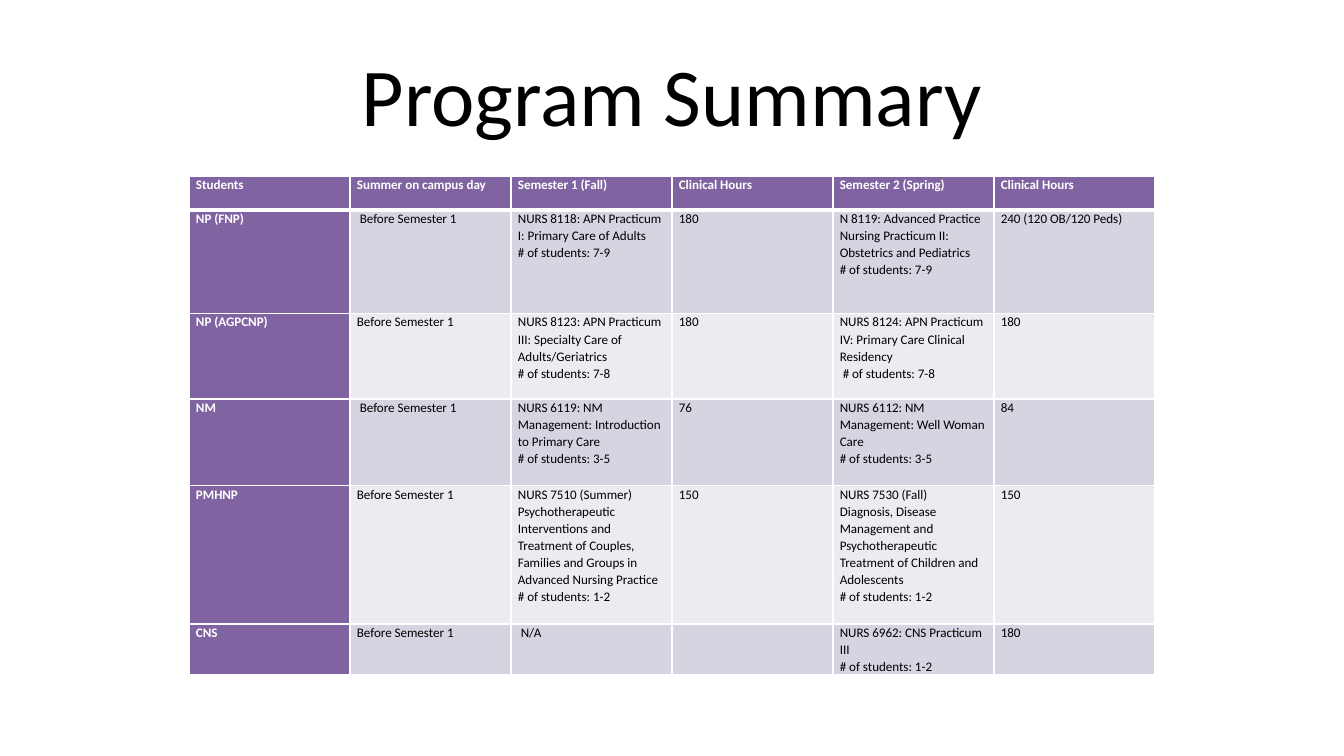
from dataclasses import dataclass

from lxml.etree import SubElement as Sub
from pptx import Presentation as Deck
from pptx.dml.color import RGBColor as Color
from pptx.enum.text import MSO_ANCHOR as Anchor, PP_ALIGN as Align
from pptx.oxml.ns import qn
from pptx.util import Emu, Pt

SCALE = 9525


@dataclass(frozen=True)
class Theme:
    face: str = "Calibri"
    title: int = 44
    body: int = 7
    ink: str = "000000"
    white: str = "FFFFFF"
    head: str = "8064A2"
    odd: str = "D8D3E0"
    even: str = "EDEAF0"
    thin: int = 1
    thick: int = 3


@dataclass(frozen=True)
class Row:
    high: int
    cells: tuple[str, ...]


THEME = Theme()
LEFT, TOP, WIDE = 135, 126, 115
ROWS = (
    Row(24, ("Students", "Summer on campus day", "Semester 1 (Fall)",
             "Clinical Hours", "Semester 2 (Spring)", "Clinical Hours")),
    Row(74, ("NP (FNP)", " Before Semester 1",
             "NURS 8118: APN Practicum I: Primary Care of Adults\n# of students: 7-9",
             "180",
             "N 8119: Advanced Practice Nursing Practicum II: "
             "Obstetrics and Pediatrics\n# of students: 7-9",
             "240 (120 OB/120 Peds)")),
    Row(61, ("NP (AGPCNP)", "Before Semester 1",
             "NURS 8123: APN Practicum III: Specialty Care of "
             "Adults/Geriatrics\n# of students: 7-8",
             "180",
             "NURS 8124: APN Practicum IV: Primary Care Clinical "
             "Residency\n # of students: 7-8",
             "180")),
    Row(62, ("NM", " Before Semester 1",
             "NURS 6119: NM Management: Introduction to Primary Care\n# of students: 3-5",
             "76",
             "NURS 6112: NM Management: Well Woman Care\n# of students: 3-5",
             "84")),
    Row(99, ("PMHNP", "Before Semester 1",
             "NURS 7510 (Summer)\nPsychotherapeutic Interventions and Treatment of "
             "Couples, Families and Groups in Advanced Nursing Practice\n"
             "# of students: 1-2",
             "150",
             "NURS 7530 (Fall)\nDiagnosis, Disease Management and Psychotherapeutic "
             "Treatment of Children and Adolescents\n# of students: 1-2",
             "150")),
    Row(36, ("CNS", "Before Semester 1", " N/A", "",
             "NURS 6962: CNS Practicum III\n# of students: 1-2", "180")),
)


def px(size: int) -> Emu:
    return Emu(size * SCALE)


def style(font, size: int, tint: str, bold: bool = False) -> None:
    font.name = THEME.face
    font.size = Pt(size)
    font.bold = bold
    font.color.rgb = Color.from_string(tint)


def edge(cell, row: int) -> None:
    props = cell._tc.get_or_add_tcPr()
    top = THEME.thick if row == 1 else THEME.thin
    base = THEME.thick if row == 0 else THEME.thin
    sides = {"lnL": THEME.thin, "lnR": THEME.thin, "lnT": top, "lnB": base}
    for side, width in sides.items():
        line = Sub(props, qn(f"a:{side}"), w=str(Pt(width)))
        Sub(Sub(line, qn("a:solidFill")), qn("a:srgbClr"), val=THEME.white)


def draw_cell(cell, text: str, row: int, col: int) -> None:
    label = row == 0 or col == 0
    cell.margin_left = cell.margin_right = px(5)
    cell.margin_top = cell.margin_bottom = 0
    cell.vertical_anchor = Anchor.TOP
    edge(cell, row)
    fill = THEME.head if label else THEME.odd if row % 2 else THEME.even
    cell.fill.solid()
    cell.fill.fore_color.rgb = Color.from_string(fill)
    cell.text_frame.text = text
    for para in cell.text_frame.paragraphs:
        para.line_spacing = 1.07
        para.space_after = Pt(0 if row else 8)
        style(para.font, THEME.body, THEME.white if label else THEME.ink, label)


def draw_title(slide, text: str) -> None:
    frame = slide.shapes.add_textbox(px(48), px(22), px(864), px(90)).text_frame
    frame.word_wrap = True
    frame.vertical_anchor = Anchor.MIDDLE
    para = frame.paragraphs[0]
    para.text = text
    para.alignment = Align.CENTER
    style(para.font, THEME.title, THEME.ink)


def draw_table(slide, rows: tuple[Row, ...]) -> None:
    count = len(rows[0].cells)
    high = sum(row.high for row in rows)
    table = slide.shapes.add_table(
        len(rows), count, px(LEFT), px(TOP), px(WIDE * count), px(high)
    ).table
    table.first_row = table.horz_banding = False
    for col in table.columns:
        col.width = px(WIDE)
    for i, row in enumerate(rows):
        table.rows[i].height = px(row.high)
        for j, text in enumerate(row.cells):
            draw_cell(table.cell(i, j), text, i, j)


def main() -> None:
    deck = Deck()
    deck.slide_width, deck.slide_height = px(960), px(540)
    slide = deck.slides.add_slide(deck.slide_layouts[6])
    draw_title(slide, "Program Summary")
    draw_table(slide, ROWS)
    deck.save("out.pptx")


if __name__ == "__main__":
    main()
